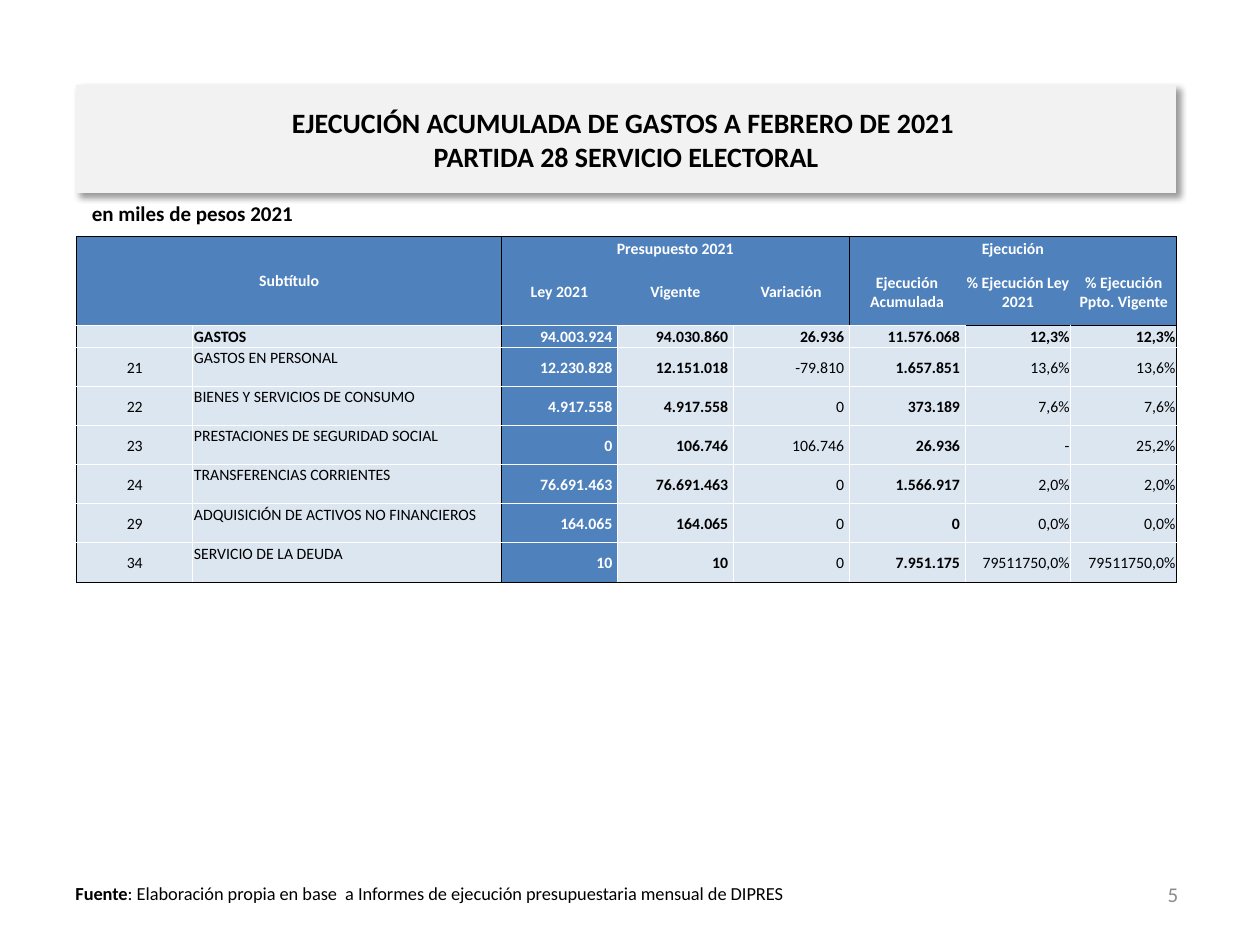
from lxml.etree import SubElement
from pptx import Presentation
from pptx.dml.color import RGBColor
from pptx.enum.text import MSO_ANCHOR as Anchor, PP_ALIGN as Align
from pptx.oxml import parse_xml
from pptx.oxml.ns import nsdecls, qn
from pptx.util import Inches, Pt

BLACK = RGBColor(0x00, 0x00, 0x00)
WHITE = RGBColor(0xFF, 0xFF, 0xFF)
BLUE = RGBColor(0x4F, 0x81, 0xBD)
PALE_BLUE = RGBColor(0xDC, 0xE6, 0xF1)
LIGHT_GRAY = RGBColor(0xF2, 0xF2, 0xF2)
NUMBER_GRAY = RGBColor(0x8C, 0x8C, 0x8C)
FONT = "Calibri"
PLAIN_STYLE = "{2D5ABB26-0587-4C30-8999-92F81FD0307C}"

LEFT, CONTENT_WIDTH = 0.61, 8.72
COLUMN_WIDTHS = [0.92, 2.45, 0.92, 0.92, 0.92, 0.92, 0.84, 0.84]
ROW_HEIGHTS = [0.17, 0.53, 0.18] + [0.31] * 6
HEADER_ROWS, TOTAL_ROW = 2, 2
NAME_COLUMN, LAW_COLUMN, EXECUTED_COLUMN, FIRST_PERCENT = 1, 2, 5, 6
BOLD_COLUMNS = (2, 3, 5)

ROWS = [
    ["Subtítulo", "", "Presupuesto 2021", "", "", "Ejecución", "", ""],
    ["", "", "Ley 2021", "Vigente", "Variación", "Ejecución Acumulada",
     "% Ejecución Ley 2021", "% Ejecución Ppto. Vigente"],
    ["", "GASTOS", "94.003.924", "94.030.860", "26.936", "11.576.068", "12,3%", "12,3%"],
    ["21", "GASTOS EN PERSONAL", "12.230.828", "12.151.018", "-79.810", "1.657.851",
     "13,6%", "13,6%"],
    ["22", "BIENES Y SERVICIOS DE CONSUMO", "4.917.558", "4.917.558", "0", "373.189",
     "7,6%", "7,6%"],
    ["23", "PRESTACIONES DE SEGURIDAD SOCIAL", "0", "106.746", "106.746", "26.936",
     "-", "25,2%"],
    ["24", "TRANSFERENCIAS CORRIENTES", "76.691.463", "76.691.463", "0", "1.566.917",
     "2,0%", "2,0%"],
    ["29", "ADQUISICIÓN DE ACTIVOS NO FINANCIEROS", "164.065", "164.065", "0", "0",
     "0,0%", "0,0%"],
    ["34", "SERVICIO DE LA DEUDA", "10", "10", "0", "7.951.175",
     "79511750,0%", "79511750,0%"],
]


def format_run(run, size, color=BLACK, bold=False):
    run.font.name = FONT
    run.font.size = Pt(size)
    run.font.bold = bold
    run.font.color.rgb = color


def add_text(slide, box, parts, size, color=BLACK, align=Align.LEFT, anchor=Anchor.TOP):
    """Add a one-paragraph text box; parts are (text, bold) pairs."""
    frame = slide.shapes.add_textbox(*map(Inches, box)).text_frame
    frame.word_wrap = True
    frame.vertical_anchor = anchor
    paragraph = frame.paragraphs[0]
    paragraph.alignment = align
    for text, bold in parts:
        run = paragraph.add_run()
        run.text = text
        format_run(run, size, color, bold)


def fill_title(slide, text):
    title = slide.shapes.title
    title.left, title.top = Inches(LEFT), Inches(0.68)
    title.width, title.height = Inches(CONTENT_WIDTH), Inches(0.85)
    title.fill.solid()
    title.fill.fore_color.rgb = LIGHT_GRAY
    title.line.color.rgb = LIGHT_GRAY
    title.line.width = Pt(0.75)
    title._element.spPr.append(parse_xml(
        f'<a:effectLst {nsdecls("a")}>'
        f'<a:outerShdw blurRad="{Pt(4)}" dist="{Pt(3)}" dir="2700000" algn="tl" rotWithShape="0">'
        f'<a:srgbClr val="{BLACK}"><a:alpha val="40000"/></a:srgbClr>'
        '</a:outerShdw></a:effectLst>'))
    frame = title.text_frame
    frame.text = text
    frame.vertical_anchor = Anchor.MIDDLE
    paragraph = frame.paragraphs[0]
    paragraph.alignment = Align.CENTER
    for run in paragraph.runs:
        format_run(run, 16, bold=True)


def vertical_edge(boundary, row):
    if boundary in (0, LAW_COLUMN, len(COLUMN_WIDTHS)):
        return BLACK
    if row < HEADER_ROWS:
        return BLACK if boundary == EXECUTED_COLUMN else None
    return WHITE


def horizontal_edge(boundary, column):
    if boundary in (0, len(ROW_HEIGHTS)):
        return BLACK
    if boundary < HEADER_ROWS:
        return None
    return BLACK if boundary == HEADER_ROWS and column >= FIRST_PERCENT else WHITE


def set_borders(cell, row, column):
    edges = {
        "a:lnL": vertical_edge(column, row),
        "a:lnR": vertical_edge(column + cell.span_width, row),
        "a:lnT": horizontal_edge(row, column),
        "a:lnB": horizontal_edge(row + cell.span_height, column),
    }
    properties = cell._tc.get_or_add_tcPr()
    for tag, color in edges.items():
        line = SubElement(properties, qn(tag), w=str(Pt(0.5)))
        if color is None:
            SubElement(line, qn("a:noFill"))
        else:
            fill = SubElement(line, qn("a:solidFill"))
            SubElement(fill, qn("a:srgbClr"), val=str(color))


def fill_cell(cell, row, column, text):
    header = row < HEADER_ROWS
    dark = header or column == LAW_COLUMN
    number = not header and LAW_COLUMN <= column < FIRST_PERCENT
    cell.margin_left = cell.margin_top = Inches(0.01)
    cell.margin_right = Inches(0.04 if number else 0.01)
    cell.margin_bottom = 0
    set_borders(cell, row, column)
    cell.fill.solid()
    cell.fill.fore_color.rgb = BLUE if dark else PALE_BLUE

    cell.vertical_anchor = Anchor.MIDDLE
    if row == 0 and column > 0:
        cell.vertical_anchor = Anchor.BOTTOM
    elif row > TOTAL_ROW and column == NAME_COLUMN:
        cell.vertical_anchor = Anchor.TOP

    cell.text = text
    paragraph = cell.text_frame.paragraphs[0]
    if header or column == 0:
        paragraph.alignment = Align.CENTER
    else:
        paragraph.alignment = Align.LEFT if column == NAME_COLUMN else Align.RIGHT
    bold = row <= TOTAL_ROW or column in BOLD_COLUMNS
    for run in paragraph.runs:
        format_run(run, 9, WHITE if dark else BLACK, bold)
    if not text:
        SubElement(paragraph._p, qn("a:endParaRPr"), sz="900")


def add_budget_table(slide):
    frame = slide.shapes.add_table(
        len(ROW_HEIGHTS), len(COLUMN_WIDTHS), Inches(LEFT), Inches(1.88),
        Inches(CONTENT_WIDTH), Inches(sum(ROW_HEIGHTS)))
    table = frame.table
    table.first_row = table.horz_banding = False
    table._tbl.tblPr.find(qn("a:tableStyleId")).text = PLAIN_STYLE
    for column, width in zip(table.columns, COLUMN_WIDTHS):
        column.width = Inches(width)
    for row, height in zip(table.rows, ROW_HEIGHTS):
        row.height = Inches(height)
    for first, last in (((0, 0), (1, 1)), ((0, 2), (0, 4)), ((0, 5), (0, 7))):
        table.cell(*first).merge(table.cell(*last))
    for row, texts in enumerate(ROWS):
        for column, text in enumerate(texts):
            fill_cell(table.cell(row, column), row, column, text)


def main():
    presentation = Presentation()
    presentation.slide_width, presentation.slide_height = Inches(10), Inches(7.5)
    slide = presentation.slides.add_slide(presentation.slide_layouts[5])
    fill_title(slide, "EJECUCIÓN ACUMULADA DE GASTOS A FEBRERO DE 2021 \v"
                      "PARTIDA 28 SERVICIO ELECTORAL")
    add_text(slide, (0.63, 1.54, 8.62, 0.5), [("en miles de pesos 2021", True)], 12)
    add_budget_table(slide)
    source = ": Elaboración propia en base  a Informes de ejecución presupuestaria mensual de DIPRES"
    add_text(slide, (0.5, 6.95, 5.91, 0.28), [("Fuente", True), (source, False)], 10.5)
    add_text(slide, (7.12, 6.9, 2.33, 0.4), [("5", False)], 12, NUMBER_GRAY,
             Align.RIGHT, Anchor.MIDDLE)
    presentation.save("out.pptx")


if __name__ == "__main__":
    main()
